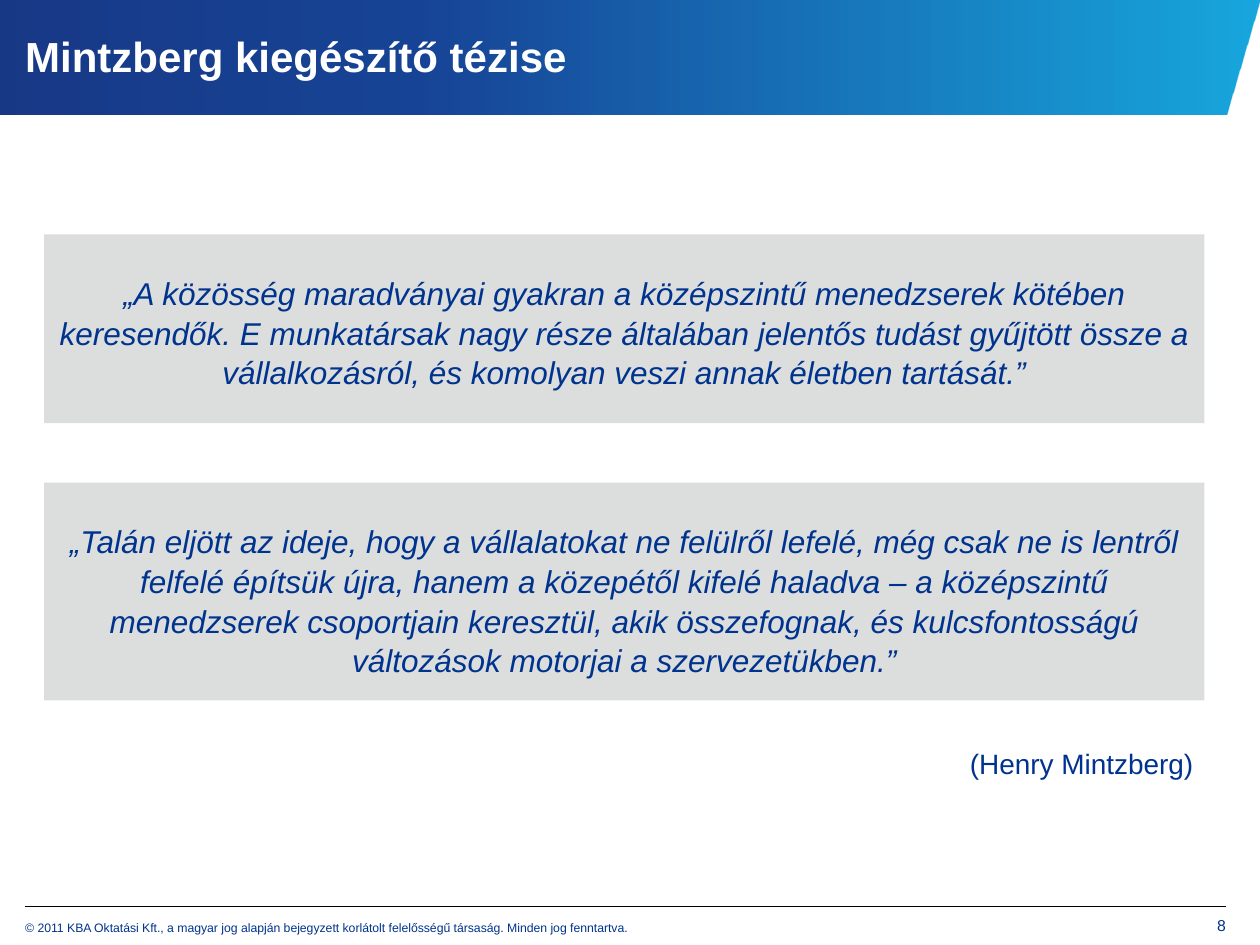
"""Build the slide with Mintzberg's two supplementary quotations."""
from lxml import etree
from pptx import Presentation
from pptx import util as u
from pptx.dml.color import RGBColor
from pptx.enum import shapes, text
from pptx.oxml import parse_xml
from pptx.oxml.ns import nsdecls, qn

COLORS = {"navy": "00338D", "deep": "00257A", "sky": "009FDA",
          "panel": "DCDDDD", "white": "FFFFFF", "black": "000000"}
TITLE = "Mintzberg kiegészítő tézise"
QUOTES = [
    (1.86, 1.5, "„A közösség maradványai gyakran a középszintű menedzserek kötében "
     "keresendők. E munkatársak nagy része általában jelentős tudást gyűjtött össze a "
     "vállalkozásról, és komolyan veszi annak életben tartását.”"),
    (3.83, 1.73, "„Talán eljött az ideje, hogy a vállalatokat ne felülről lefelé, még "
     "csak ne is lentről felfelé építsük újra, hanem a közepétől kifelé haladva – a "
     "középszintű menedzserek csoportjain keresztül, akik összefognak, és "
     "kulcsfontosságú változások motorjai a szervezetükben.”"),
]
LEFT, CENTER, RIGHT = text.PP_ALIGN.LEFT, text.PP_ALIGN.CENTER, text.PP_ALIGN.RIGHT
LABELS = [
    ("(Henry Mintzberg)", (7.57, 5.88, 2, 0.37), (0.1, 0.05, 0.1, 0.05), 16, RIGHT),
    ("© 2011 KBA Oktatási Kft., a magyar jog alapján bejegyzett korlátolt felelősségű "
     "társaság. Minden jog fenntartva.", (0.2, 7.22, 6.38, 0.2), (0, 0.08, 0, 0), 7, LEFT),
    ("8", (9.18, 7.19, 0.55, 0.31), (0.08, 0.08, 0, 0), 9, RIGHT),
]
BAND = [(0, 0), (0, 0.91), (9.73, 0.91), (10, 0)]
STOPS = [(0, "deep"), (35, "navy"), (100, "sky")]


def rgb(name):
    return RGBColor.from_string(COLORS[name])


def write(sp, words, size, align, insets=(0, 0, 0, 0), color="navy",
          anchor=text.MSO_ANCHOR.TOP, bold=False, italic=False):
    tf = sp.text_frame
    tf.word_wrap = True
    tf.auto_size = text.MSO_AUTO_SIZE.NONE
    tf.vertical_anchor = anchor
    tf.margin_left, tf.margin_top, tf.margin_right, tf.margin_bottom = map(u.Inches, insets)
    p = tf.paragraphs[0]
    p.alignment = align
    r = p.add_run()
    r.text = words
    f = r.font
    f.name, f.size, f.bold, f.italic = "Arial", u.Pt(size), bold, italic
    f.color.rgb = rgb(color)
    return p


def add_band(s):
    fb = s.shapes.build_freeform(*map(u.Inches, BAND[0]), scale=1.0)
    fb.add_line_segments([tuple(map(u.Inches, pt)) for pt in BAND[1:]], close=True)
    sp = fb.convert_to_shape()
    sp.shadow.inherit = False
    sp.line.fill.background()
    stops = "".join(
        f'<a:gs pos="{pos * 1000}"><a:srgbClr val="{COLORS[c]}">'
        '<a:alpha val="90000"/></a:srgbClr></a:gs>' for pos, c in STOPS)
    grad = parse_xml(f'<a:gradFill {nsdecls("a")}><a:gsLst>{stops}</a:gsLst>'
                     '<a:lin ang="0" scaled="0"/></a:gradFill>')
    sp._element.spPr.find(qn("a:custGeom")).addnext(grad)


def main():
    prs = Presentation()
    prs.slide_width, prs.slide_height = u.Inches(10), u.Inches(7.5)
    s = prs.slides.add_slide(prs.slide_layouts[5])
    add_band(s)

    rule = s.shapes.add_connector(shapes.MSO_CONNECTOR.STRAIGHT,
                                  *map(u.Inches, (0.2, 7.19, 9.73, 7.19)))
    rule.line.color.rgb = rgb("black")
    rule.line.width = u.Pt(0.25)
    etree.SubElement(rule._element.spPr, qn("a:effectLst"))

    title = s.shapes.title
    title.left, title.top, title.width, title.height = map(u.Inches, (0.2, 0.13, 9.53, 0.63))
    write(title, TITLE, 24, LEFT, color="white", anchor=text.MSO_ANCHOR.MIDDLE, bold=True)
    s.shapes._spTree.append(title._element)

    for words, box, insets, size, align in LABELS:
        write(s.shapes.add_textbox(*map(u.Inches, box)), words, size, align, insets)

    for top, height, words in QUOTES:
        sp = s.shapes.add_shape(shapes.MSO_SHAPE.RECTANGLE,
                                *map(u.Inches, (0.35, top, 9.21, height)))
        sp.shadow.inherit = False
        sp.fill.solid()
        sp.fill.fore_color.rgb = rgb("panel")
        sp.line.fill.background()
        p = write(sp, words, 18, CENTER, (0, 0.3, 0, 0), italic=True)
        p.line_spacing = 1.05

    prs.save("out.pptx")


if __name__ == "__main__":
    main()
